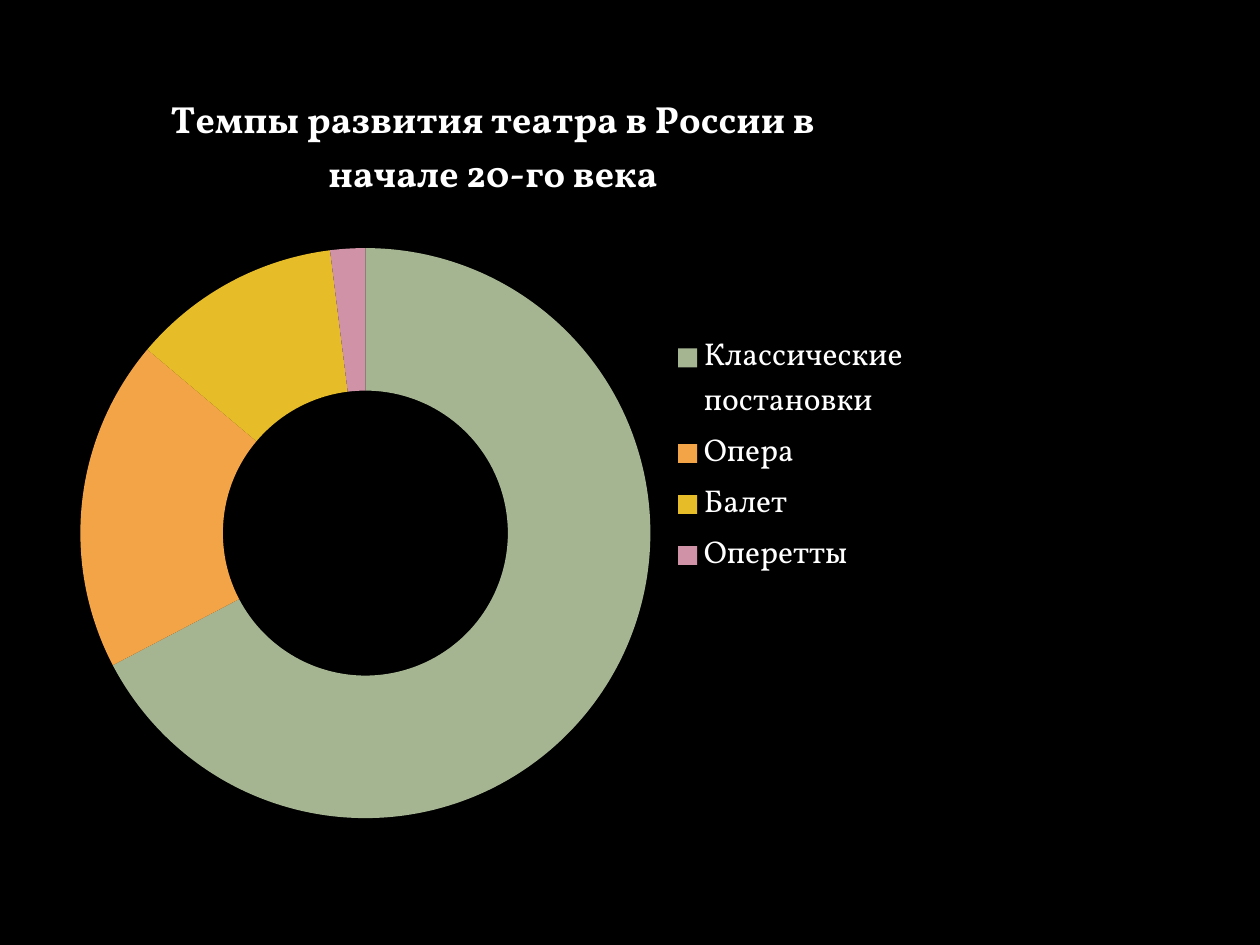
from typing import NamedTuple

from pptx import Presentation
from pptx.chart.data import CategoryChartData
from pptx.dml.color import RGBColor
from pptx.enum.chart import XL_CHART_TYPE as ChartType, XL_LEGEND_POSITION as LegendPosition
from pptx.util import Inches, Pt

BLACK = RGBColor(0x00, 0x00, 0x00)
WHITE = RGBColor(0xFF, 0xFF, 0xFF)
SAGE = RGBColor(0xA5, 0xB5, 0x92)
ORANGE = RGBColor(0xF3, 0xA4, 0x47)
GOLD = RGBColor(0xE7, 0xBC, 0x29)
PINK = RGBColor(0xD0, 0x92, 0xA7)

HEADING = "Темпы развития театра в России в начале 20-го века"
BODY_FONT = {"name": "Vollkorn", "size": Pt(18), "bold": False}
HEADING_FONT = {"name": "Vollkorn", "size": Pt(21.6), "bold": True}


class Genre(NamedTuple):
    name: str
    share: int
    color: RGBColor


GENRES = [
    Genre("Классические постановки", 68, SAGE),
    Genre("Опера", 19, ORANGE),
    Genre("Балет", 12, GOLD),
    Genre("Оперетты", 2, PINK),
]


def style_font(font, values: dict) -> None:
    for attribute, value in values.items():
        setattr(font, attribute, value)
    font.color.rgb = WHITE


def add_genre_doughnut(slide, genres: list[Genre]) -> None:
    shares = CategoryChartData()
    shares.categories = [genre.name for genre in genres]
    shares.add_series(HEADING, [genre.share for genre in genres])
    doughnut = slide.shapes.add_chart(
        ChartType.DOUGHNUT, Inches(0.5), Inches(0.5), Inches(6.83), Inches(6.25), shares
    ).chart
    style_font(doughnut.font, BODY_FONT)

    # Heading
    doughnut.has_title = True
    heading = doughnut.chart_title.text_frame
    heading.text = HEADING
    style_font(heading.paragraphs[0].runs[0].font, HEADING_FONT)
    doughnut.chart_title.include_in_layout = False

    # Legend
    doughnut.has_legend = True
    doughnut.legend.position = LegendPosition.RIGHT
    doughnut.legend.include_in_layout = False
    style_font(doughnut.legend.font, BODY_FONT)

    # Ring segments
    ring = doughnut.plots[0]
    ring.vary_by_categories = True
    for index, genre in enumerate(genres):
        segment = ring.series[0].points[index].format
        segment.fill.solid()
        segment.fill.fore_color.rgb = genre.color
        segment.line.fill.background()


def main() -> None:
    deck = Presentation()
    deck.slide_width, deck.slide_height = Inches(10), Inches(7.5)
    slide = deck.slides.add_slide(deck.slide_layouts[6])
    slide.background.fill.solid()
    slide.background.fill.fore_color.rgb = BLACK
    add_genre_doughnut(slide, GENRES)
    deck.save("out.pptx")


if __name__ == "__main__":
    main()
